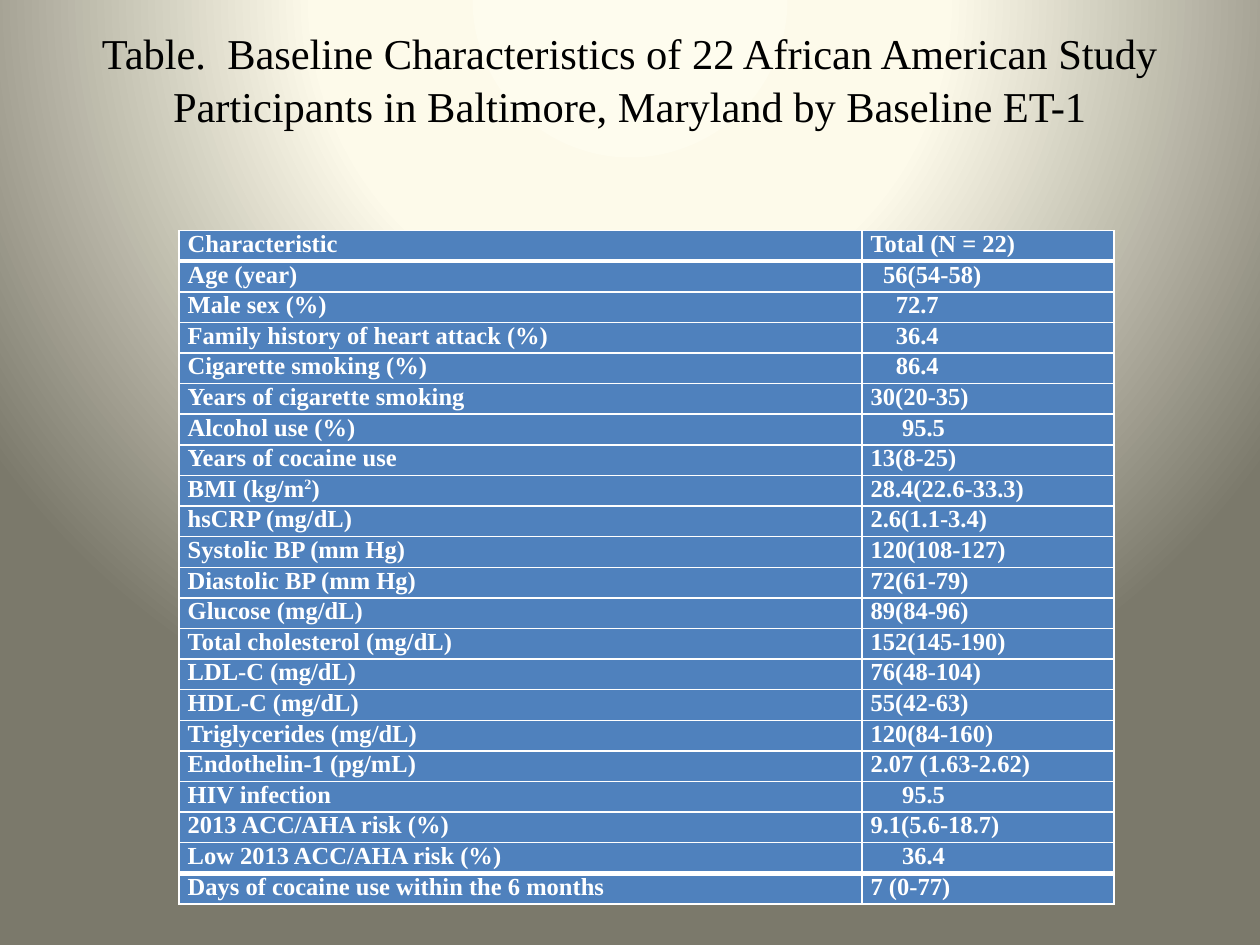
from pptx import Presentation, util as u
from pptx.dml.color import RGBColor
from pptx.enum import text
from pptx.oxml import parse_xml
from pptx.oxml.ns import nsdecls

TITLE = ("Table.  Baseline Characteristics of 22 African American Study "
         "Participants in Baltimore, Maryland by Baseline ET-1")
ROWS = [
    ("Characteristic", "Total (N = 22)", 0),
    ("Age (year)", "56(54-58)", 2),
    ("Male sex (%)", "72.7", 4),
    ("Family history of heart attack (%)", "36.4", 4),
    ("Cigarette smoking (%)", "86.4", 4),
    ("Years of cigarette smoking", "30(20-35)", 0),
    ("Alcohol use (%)", "95.5", 5),
    ("Years of cocaine use", "13(8-25)", 0),
    ("BMI (kg/m^2^)", "28.4(22.6-33.3)", 0),
    ("hsCRP (mg/dL)", "2.6(1.1-3.4)", 0),
    ("Systolic BP (mm Hg)", "120(108-127)", 0),
    ("Diastolic BP (mm Hg)", "72(61-79)", 0),
    ("Glucose (mg/dL)", "89(84-96)", 0),
    ("Total cholesterol (mg/dL)", "152(145-190)", 0),
    ("LDL-C (mg/dL)", "76(48-104)", 0),
    ("HDL-C (mg/dL)", "55(42-63)", 0),
    ("Triglycerides (mg/dL)", "120(84-160)", 0),
    ("Endothelin-1 (pg/mL)", "2.07 (1.63-2.62)", 0),
    ("HIV infection", "95.5", 5),
    ("2013 ACC/AHA risk (%)", "9.1(5.6-18.7)", 0),
    ("Low 2013 ACC/AHA risk (%)", "36.4", 5),
    ("Days of cocaine use within the 6 months", "7 (0-77)", 0),
]
COLUMNS = (5.42, 2)
TABLE_LEFT, TABLE_TOP, TABLE_HEIGHT = 1.42, 1.83, 5.35
PADDING, INDENT_STEP = 0.07, 0.05
THIN, THICK = 1, 3
FONT = "Times New Roman"
BLACK = RGBColor(0x00, 0x00, 0x00)
WHITE = RGBColor(0xFF, 0xFF, 0xFF)
BLUE = RGBColor(0x4F, 0x81, 0xBD)
GLOW = [(0, RGBColor(0xFE, 0xFC, 0xEE)),
        (40, RGBColor(0xFD, 0xFA, 0xEA)),
        (100, RGBColor(0x7B, 0x79, 0x6B))]


def set_font(paragraph, size, color, bold=False):
    font = paragraph.font
    font.name, font.size, font.bold = FONT, u.Pt(size), bold
    font.color.rgb = color


def paint_background(page):
    page.background.fill.solid()
    properties = page._element.cSld.bg.bgPr
    stops = "".join(f'<a:gs pos="{share * 1000}"><a:srgbClr val="{color}"/></a:gs>'
                    for share, color in GLOW)
    properties.replace(properties[0], parse_xml(
        f'<a:gradFill {nsdecls("a")} rotWithShape="1"><a:gsLst>{stops}</a:gsLst>'
        '<a:path path="circle">'
        '<a:fillToRect l="50000" t="-80000" r="50000" b="180000"/>'
        '</a:path></a:gradFill>'))


def set_borders(cell, top, bottom):
    properties = cell._tc.get_or_add_tcPr()
    sides = (("L", THIN), ("R", THIN), ("T", top), ("B", bottom))
    for position, (side, width) in enumerate(sides):
        properties.insert(position, parse_xml(
            f'<a:ln{side} {nsdecls("a")} w="{u.Pt(width)}">'
            f'<a:solidFill><a:srgbClr val="{WHITE}"/></a:solidFill></a:ln{side}>'))


def write_cell(cell, words, indent, top, bottom):
    cell.margin_left = u.Inches(PADDING + indent * INDENT_STEP)
    cell.margin_right = u.Inches(PADDING)
    cell.margin_top = cell.margin_bottom = 0
    cell.fill.solid()
    cell.fill.fore_color.rgb = BLUE
    para = cell.text_frame.paragraphs[0]
    set_font(para, 14, WHITE, True)
    for number, part in enumerate(words.split("^")):
        span = para.add_run()
        span.text = part
        if number % 2:
            span._r.get_or_add_rPr().set("baseline", "30000")
    set_borders(cell, top, bottom)


def add_title(page):
    box = page.shapes.add_textbox(u.Inches(0.5), u.Inches(0.2), u.Inches(9), u.Inches(1.35))
    frame = box.text_frame
    frame.word_wrap = True
    frame.margin_top = 0
    frame.vertical_anchor = text.MSO_ANCHOR.TOP
    para = frame.paragraphs[0]
    para.text = TITLE
    para.alignment = text.PP_ALIGN.CENTER
    para.line_spacing = 1.04
    set_font(para, 24.3, BLACK)


def add_characteristics(page):
    table = page.shapes.add_table(
        len(ROWS), len(COLUMNS), u.Inches(TABLE_LEFT), u.Inches(TABLE_TOP),
        u.Inches(sum(COLUMNS)), u.Inches(TABLE_HEIGHT)).table
    for column, width in zip(table.columns, COLUMNS):
        column.width = u.Inches(width)
    last = len(ROWS) - 1
    for index, (label, value, indent) in enumerate(ROWS):
        table.rows[index].height = u.Inches(TABLE_HEIGHT / len(ROWS))
        top = THICK if index in (1, last) else THIN
        bottom = THICK if index in (0, last - 1) else THIN
        write_cell(table.cell(index, 0), label, 0, top, bottom)
        write_cell(table.cell(index, 1), value, indent, top, bottom)


def main():
    deck = Presentation()
    deck.slide_width, deck.slide_height = u.Inches(10), u.Inches(7.5)
    page = deck.slides.add_slide(deck.slide_layouts[6])
    paint_background(page)
    add_title(page)
    add_characteristics(page)
    deck.save("out.pptx")


if __name__ == "__main__":
    main()
